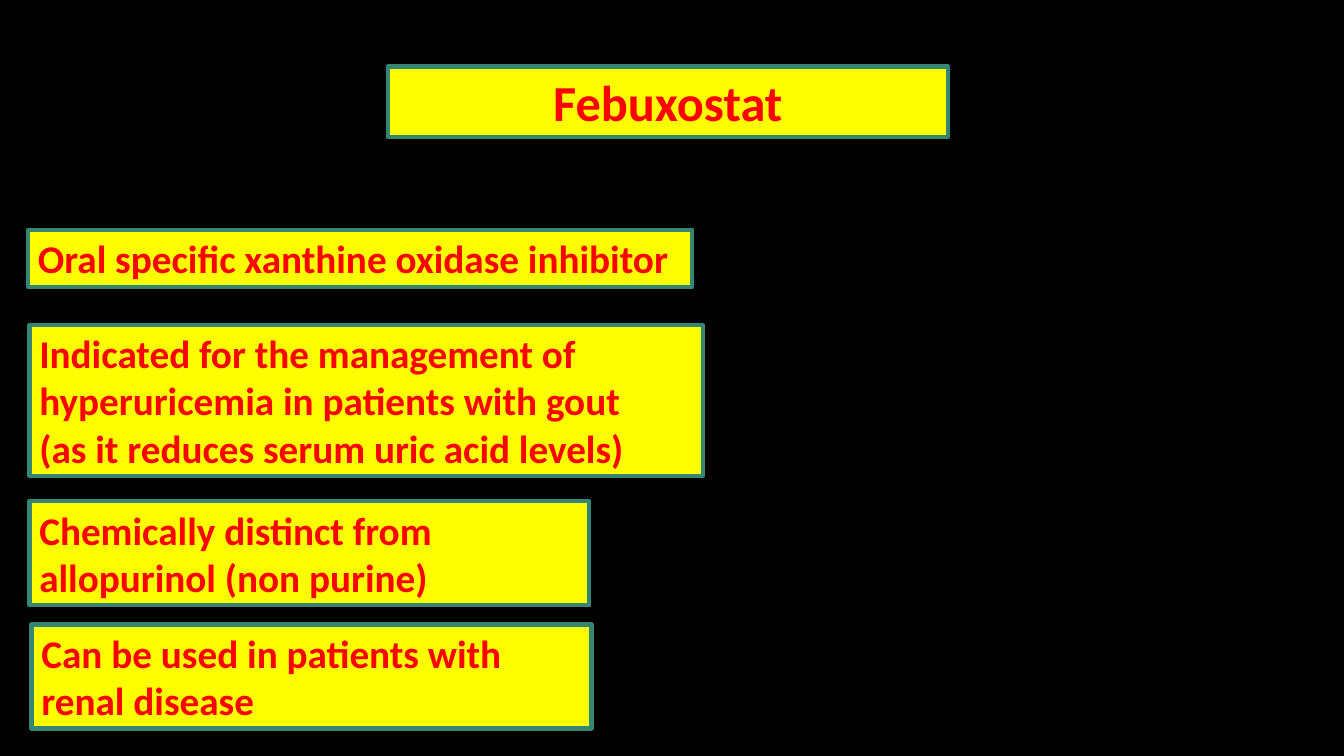
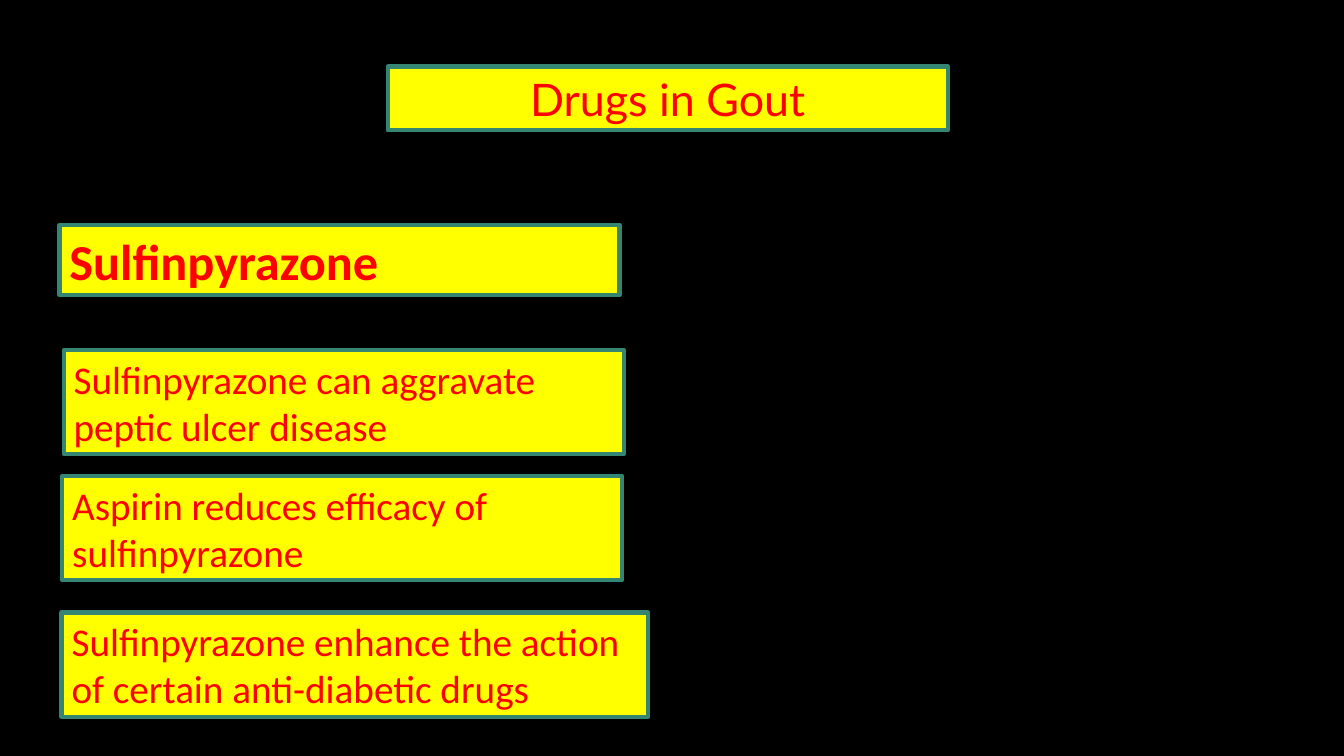
from pptx import Presentation
from pptx.dml.color import RGBColor
from pptx.enum.text import MSO_AUTO_SIZE as AutoSize, PP_ALIGN as Align
from pptx.util import Pt

COLORS = {"background": "000000", "box": "FFFF00", "border": "348672", "text": "FF0000"}
BOX_WIDTH = 400
TITLE_LEFT, TITLE_TOP = 277, 47.5
HEADING_SIZE, BODY_SIZE = 36, 28
LINE_SPACING, VERTICAL_INSETS = 1.2, 7.2


def color(name):
    return RGBColor.from_string(COLORS[name])


def add_slide(presentation):
    slide = presentation.slides.add_slide(presentation.slide_layouts[6])
    fill = slide.background.fill
    fill.solid()
    fill.fore_color.rgb = color("background")
    return slide


def add_box(slide, text, left, top, width=BOX_WIDTH, lines=1, size=BODY_SIZE,
            bold=False, font_name="Calibri", align=Align.LEFT):
    """Add a bordered text box whose height follows from its line count."""
    height = lines * size * LINE_SPACING + VERTICAL_INSETS
    shape = slide.shapes.add_textbox(Pt(left), Pt(top), Pt(width), Pt(height))
    shape.fill.solid()
    shape.fill.fore_color.rgb = color("box")
    shape.line.color.rgb = color("border")
    shape.line.width = Pt(3)

    text_frame = shape.text_frame
    text_frame.word_wrap = True
    text_frame.auto_size = AutoSize.SHAPE_TO_FIT_TEXT
    text_frame.text = text
    paragraph = text_frame.paragraphs[0]
    paragraph.alignment = align
    for run in paragraph.runs:
        run.font.name = font_name
        run.font.size = Pt(size)
        run.font.bold = bold
        run.font.color.rgb = color("text")


def add_title(slide, text, **style):
    add_box(slide, text, TITLE_LEFT, TITLE_TOP, align=Align.CENTER, **style)


def add_febuxostat_slide(presentation):
    slide = add_slide(presentation)
    add_title(slide, "Febuxostat", size=HEADING_SIZE, bold=True)

    # Properties: text, left, top, width, lines
    properties = [
        ("Oral specific xanthine oxidase inhibitor", 20, 164, 474.5, 1),
        ("Indicated for the management of hyperuricemia in patients with gout\v"
         "(as it reduces serum uric acid levels)", 21, 232, 481, 3),
        ("Chemically distinct from allopurinol (non purine)", 21, 358, BOX_WIDTH, 2),
        ("Can be used in patients with renal disease", 22.5, 446, BOX_WIDTH, 2),
    ]
    for box in properties:
        add_box(slide, *box, bold=True)


def add_sulfinpyrazone_slide(presentation):
    slide = add_slide(presentation)
    add_title(slide, "Drugs in Gout", size=32, font_name="Lato")
    add_box(slide, "Sulfinpyrazone", 42.5, 160.5, size=HEADING_SIZE, bold=True)

    # Interactions: text, left, top, width
    interactions = [
        ("Sulfinpyrazone can aggravate peptic ulcer disease", 45.5, 250, BOX_WIDTH),
        ("Aspirin reduces efficacy of sulfinpyrazone", 44.5, 340, BOX_WIDTH),
        ("Sulfinpyrazone enhance the action of certain anti-diabetic drugs", 44, 437.5, 419),
    ]
    for box in interactions:
        add_box(slide, *box, lines=2)


def main():
    presentation = Presentation()
    presentation.slide_width = Pt(960)
    presentation.slide_height = Pt(540)
    add_febuxostat_slide(presentation)
    add_sulfinpyrazone_slide(presentation)
    presentation.save("out.pptx")


if __name__ == "__main__":
    main()
